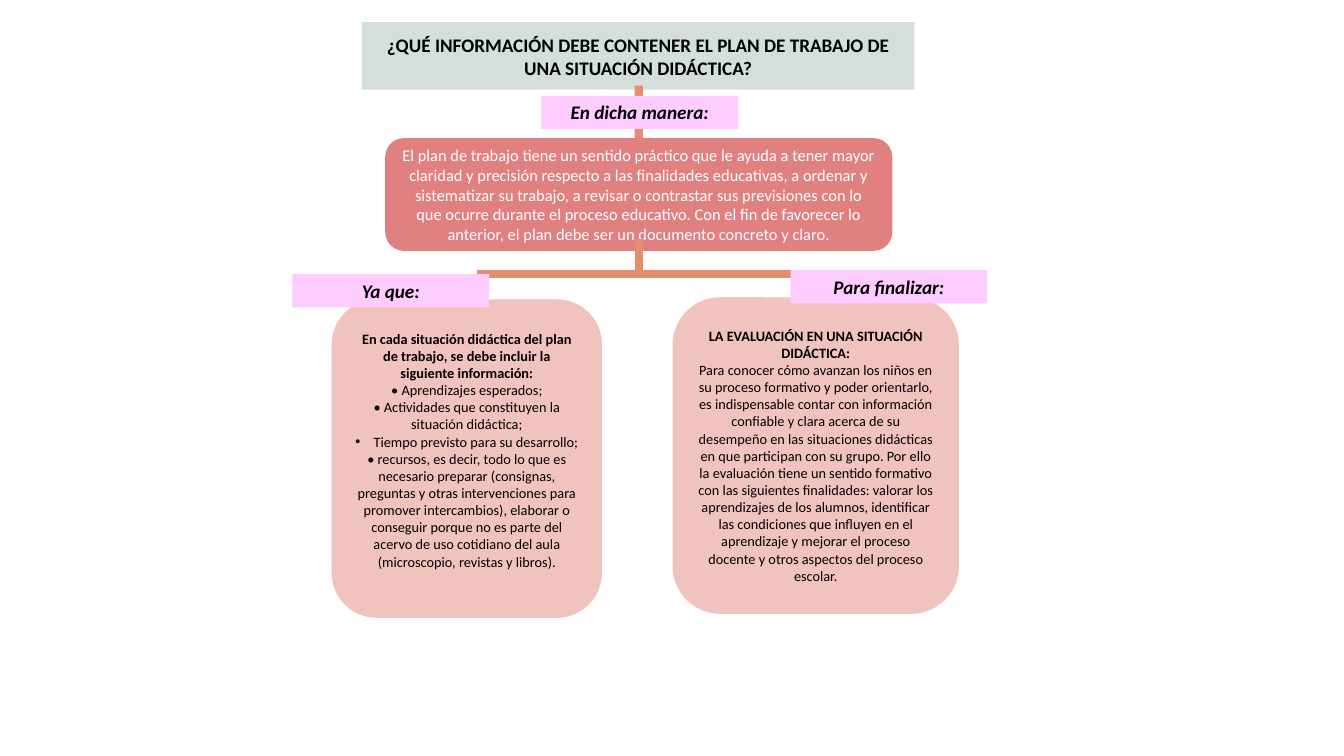
from pptx import Presentation
from pptx import util as u
from pptx.dml.color import RGBColor
from pptx.enum import shapes, text
from pptx.oxml.ns import qn
from lxml import etree

FONT = "Calibri"
BLACK, WHITE = "000000", "FFFFFF"
SAGE, CORAL, BLUSH, PINK, ORANGE = "D4DFDB", "E18081", "F0C3BE", "FFCCFF", "E38E6F"
WIDTH, HEIGHT = u.Inches(13.33), u.Inches(7.5)
COLUMN, ROW = WIDTH / 100, HEIGHT / 100
RECTANGLE = shapes.MSO_SHAPE.RECTANGLE
ROUNDED = shapes.MSO_SHAPE.ROUNDED_RECTANGLE

TITLE = "¿QUÉ INFORMACIÓN DEBE CONTENER EL PLAN DE TRABAJO DE UNA SITUACIÓN DIDÁCTICA?"
PLAN = (
    "El plan de trabajo tiene un sentido práctico que le ayuda a tener mayor claridad y "
    "precisión respecto a las finalidades educativas, a ordenar y sistematizar su trabajo, "
    "a revisar o contrastar sus previsiones con lo que ocurre durante el proceso educativo. "
    "Con el fin de favorecer lo anterior, el plan debe ser un documento concreto y claro."
)
INFORMATION = [
    ("En cada situación didáctica del plan de trabajo, se debe incluir la siguiente "
     "información:", "bold"),
    ("• Aprendizajes esperados;", ""),
    ("• Actividades que constituyen la situación didáctica;", ""),
    ("Tiempo previsto para su desarrollo;", "bullet"),
    ("• recursos, es decir, todo lo que es necesario preparar (consignas, preguntas y otras "
     "intervenciones para promover intercambios), elaborar o conseguir porque no es parte "
     "del acervo de uso cotidiano del aula (microscopio, revistas y libros).", ""),
]
EVALUATION = [
    ("LA EVALUACIÓN EN UNA SITUACIÓN DIDÁCTICA:", "bold"),
    ("Para conocer cómo avanzan los niños en su proceso formativo y poder orientarlo, es "
     "indispensable contar con información confiable y clara acerca de su desempeño en las "
     "situaciones didácticas en que participan con su grupo. Por ello la evaluación tiene "
     "un sentido formativo con las siguientes finalidades: valorar los aprendizajes de los "
     "alumnos, identificar las condiciones que influyen en el aprendizaje y mejorar el "
     "proceso docente y otros aspectos del proceso escolar.", ""),
]
LABELS = [
    ("En dicha manera:", 40.29, 12.67),
    ("Ya que:", 21.76, 36.27),
    ("Para finalizar:", 58.82, 35.73),
]
LABEL_SIZE = (14.63, 4.4)
AXIS, LEFT_BRANCH, RIGHT_BRANCH = 47.53, 35.78, 59.34
BRANCH_TOP, BRANCH_BAR, BRANCH_END = 35.73, 36.27, 39.6
BRANCHES = [
    (AXIS, 31.6, AXIS, BRANCH_TOP),
    (LEFT_BRANCH, BRANCH_BAR, RIGHT_BRANCH, BRANCH_BAR),
    (LEFT_BRANCH, BRANCH_TOP, LEFT_BRANCH, BRANCH_END),
    (RIGHT_BRANCH, BRANCH_TOP, RIGHT_BRANCH, BRANCH_END),
]


def color(value):
    return RGBColor.from_string(value)


def across(columns):
    return round(columns * COLUMN)


def down(rows):
    return round(rows * ROW)


def add_bullet(paragraph):
    properties = paragraph._p.get_or_add_pPr()
    properties.set("marL", str(u.Inches(0.18)))
    properties.set("indent", str(u.Inches(-0.18)))
    etree.SubElement(properties, qn("a:buFont")).set("typeface", "Arial")
    etree.SubElement(properties, qn("a:buChar")).set("char", "•")


def add_box(slide, preset, grid, fill, paragraphs, size, ink=BLACK,
            anchor=text.MSO_ANCHOR.MIDDLE):
    left, top, width, height = grid
    shape = slide.shapes.add_shape(preset, across(left), down(top), across(width), down(height))
    shape.shadow.inherit = False
    shape.fill.solid()
    shape.fill.fore_color.rgb = color(fill)
    shape.line.fill.background()
    frame = shape.text_frame
    frame.word_wrap = True
    frame.vertical_anchor = anchor
    for index, (words, style) in enumerate(paragraphs):
        paragraph = frame.add_paragraph() if index else frame.paragraphs[0]
        paragraph.alignment = text.PP_ALIGN.CENTER
        if style == "bullet":
            add_bullet(paragraph)
        run = paragraph.add_run()
        run.text = words
        run.font.name = FONT
        run.font.size = u.Pt(size)
        run.font.bold = "bold" in style
        run.font.italic = "italic" in style
        run.font.color.rgb = color(ink)
    return shape


def add_line(slide, x1, y1, x2, y2):
    line = slide.shapes.add_connector(
        shapes.MSO_CONNECTOR.STRAIGHT, across(x1), down(y1), across(x2), down(y2))
    line.line.color.rgb = color(ORANGE)
    line.line.width = u.Pt(6)
    etree.SubElement(line._element.spPr, qn("a:effectLst"))
    return line


def main():
    presentation = Presentation()
    presentation.slide_width, presentation.slide_height = WIDTH, HEIGHT
    slide = presentation.slides.add_slide(presentation.slide_layouts[6])

    add_box(slide, RECTANGLE, (26.93, 2.93, 41.11, 8.93), SAGE, [(TITLE, "bold")], 13.7)
    stem = add_line(slide, AXIS, 11.33, AXIS, 18.27)
    plan = add_box(slide, ROUNDED, (28.66, 18.27, 37.73, 14.93), CORAL,
                   [(PLAN, "")], 11.7, WHITE)
    stem.end_connect(plan, 0)
    for branch in BRANCHES:
        add_line(slide, *branch)

    information = add_box(slide, ROUNDED, (24.68, 39.6, 20.11, 42.13), BLUSH,
                          INFORMATION, 10.2)
    information.text_frame.margin_bottom = u.Inches(0.22)
    add_box(slide, ROUNDED, (50.04, 39.33, 21.31, 41.87), BLUSH, EVALUATION, 10.2)

    for words, left, top in LABELS:
        label = add_box(slide, RECTANGLE, (left, top, *LABEL_SIZE), PINK,
                        [(words, "bold italic")], 13.7, anchor=text.MSO_ANCHOR.TOP)
        label.text_frame.auto_size = text.MSO_AUTO_SIZE.SHAPE_TO_FIT_TEXT

    presentation.save("out.pptx")


if __name__ == "__main__":
    main()
